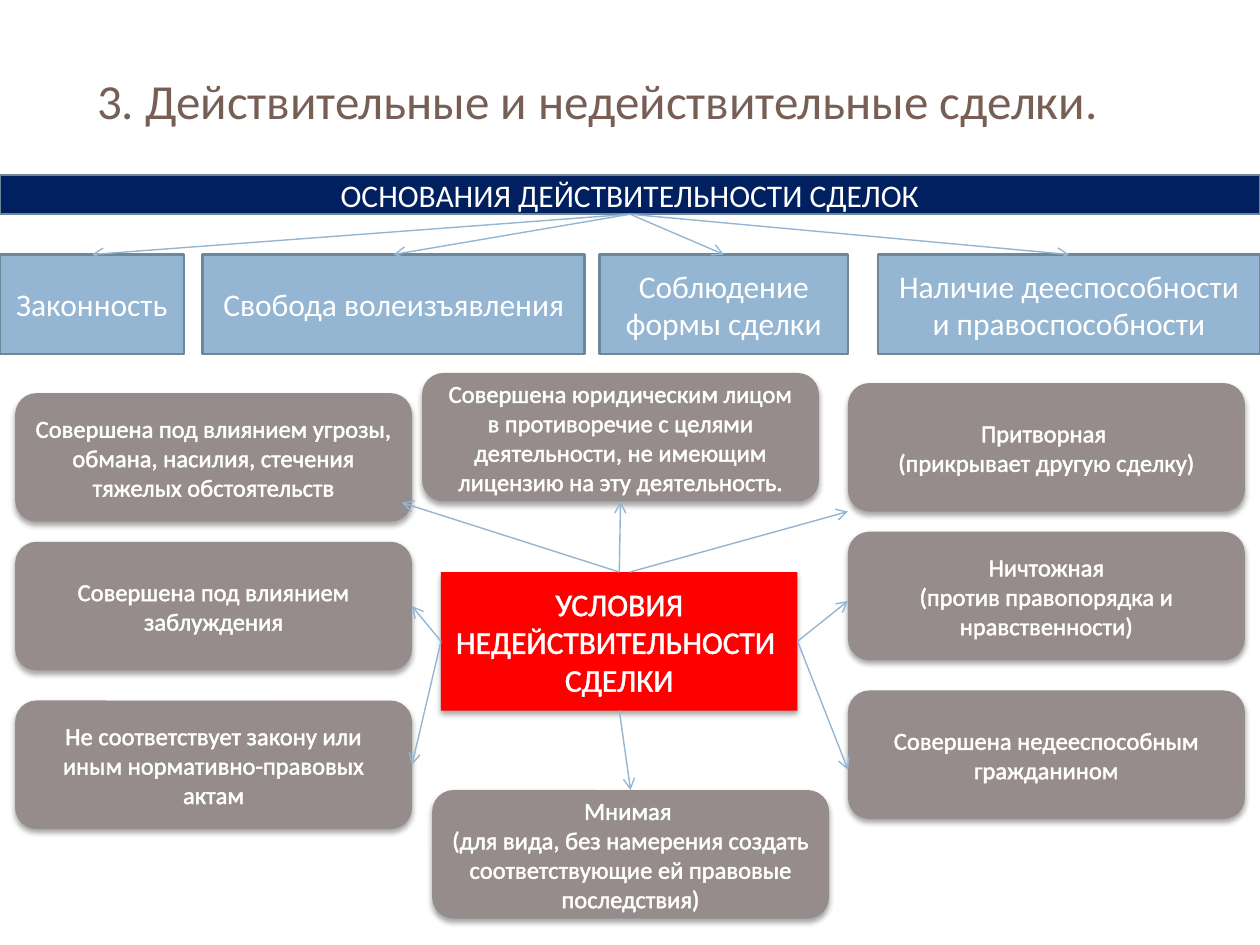
from lxml import etree
from pptx import Presentation
from pptx.dml.color import RGBColor
from pptx.enum.shapes import MSO_CONNECTOR, MSO_SHAPE
from pptx.enum.text import MSO_ANCHOR, PP_ALIGN
from pptx.oxml import parse_xml
from pptx.oxml.ns import qn
from pptx.util import Inches, Pt

RECT, ROUND = MSO_SHAPE.RECTANGLE, MSO_SHAPE.ROUNDED_RECTANGLE
LINE = MSO_CONNECTOR.STRAIGHT
LEFT, CENTER = PP_ALIGN.LEFT, PP_ALIGN.CENTER
MIDDLE = MSO_ANCHOR.MIDDLE
TOP, WEST, BOTTOM, EAST = range(4)
FONT = "Calibri"
WHITE, BROWN, NAVY = "FFFFFF", "775F55", "002060"
BLUE, EDGE, RED, GRAY = "94B6D2", "6D879B", "FF0000", "968C8C"
NS = 'xmlns:a="http://schemas.openxmlformats.org/drawingml/2006/main"'
SHADOW = (f'<a:effectLst {NS}><a:outerShdw blurRad="38100" dist="25400" '
          'dir="5400000" rotWithShape="0"><a:srgbClr val="000000">'
          '<a:alpha val="35000"/></a:srgbClr></a:outerShdw></a:effectLst>')
OUTLINE = (f'<a:ln {NS} w="18415"><a:solidFill><a:srgbClr val="FFFFFF"/>'
           '</a:solidFill></a:ln>')

GROUNDS = [
    (0, 1.46, "Законность"),
    (1.61, 3.03, "Свобода волеизъявления"),
    (4.76, 1.97, "Соблюдение формы сделки"),
    (6.97, 3.03, "Наличие дееспособности и правоспособности"),
]
ROWS = [0, 1.18, 2.44]
LEFTS = [
    "Совершена под влиянием угрозы, обмана, насилия, стечения тяжелых обстоятельств",
    "Совершена под влиянием заблуждения",
    "Не соответствует закону или иным нормативно-правовых актам",
]
RIGHTS = [
    "Притворная \n(прикрывает другую сделку)",
    "Ничтожная\n(против правопорядка и нравственности)",
    "Совершена недееспособным гражданином",
]
ABOVE = ("Совершена юридическим лицом в противоречие с целями деятельности, "
         "не имеющим лицензию на эту деятельность.")
BELOW = ("Мнимая \n(для вида, без намерения создать соответствующие ей "
         "правовые последствия)")


def color(code):
    """Turn a hex string into a colour."""
    return RGBColor.from_string(code)


def style(frame, size, code, align):
    """Format all paragraphs of a text frame."""
    frame.word_wrap = True
    frame.vertical_anchor = MIDDLE
    for para in frame.paragraphs:
        para.alignment = align
        para.font.name = FONT
        para.font.size = Pt(size)
        para.font.color.rgb = color(code)


def block(slide, box, text, fill, kind=RECT, size=18):
    """Add a filled shape with centred white text."""
    shape = slide.shapes.add_shape(kind, *map(Inches, box))
    shape.shadow.inherit = False
    shape.fill.solid()
    shape.fill.fore_color.rgb = color(fill)
    shape.text_frame.text = text
    style(shape.text_frame, size, WHITE, CENTER)
    return shape


def framed(slide, box, text, fill):
    """Add a block with a thin edge."""
    shape = block(slide, box, text, fill)
    shape.line.color.rgb = color(EDGE)
    shape.line.width = Pt(1.5)
    return shape


def raised(slide, box, text, fill, kind=ROUND, size=14):
    """Add a block with a drop shadow and outlined letters."""
    shape = block(slide, box, text, fill, kind, size)
    shape.line.fill.background()
    props = shape._element.spPr
    props.remove(props.find(qn("a:effectLst")))
    props.append(parse_xml(SHADOW))
    for para in shape.text_frame.paragraphs:
        for run in para.runs:
            run._r.get_or_add_rPr().insert(0, parse_xml(OUTLINE))
    return shape


def arrow(slide, start, end):
    """Draw an arrow between (shape, side) joins or (x, y) points."""
    joins = [isinstance(spot[0], (int, float)) for spot in (start, end)]
    first = start if joins[0] else (0, 0)
    last = end if joins[1] else (0, 0)
    line = slide.shapes.add_connector(LINE, *map(Inches, (*first, *last)))
    if not joins[0]:
        line.begin_connect(*start)
    if not joins[1]:
        line.end_connect(*end)
    line.line.color.rgb = color(BLUE)
    line.line.width = Pt(0.79)
    props = line._element.spPr
    etree.SubElement(props.find(qn("a:ln")), qn("a:tailEnd"), type="arrow")
    etree.SubElement(props, qn("a:effectLst"))


def heading(slide, box, text):
    """Place and format the title."""
    title = slide.shapes.title
    title.left, title.top, title.width, title.height = map(Inches, box)
    title.text_frame.text = text
    style(title.text_frame, 28, BROWN, LEFT)


def valid(slide, box):
    """Build the banner and the four grounds below it."""
    left, top, width, height = box
    banner = framed(slide, (left, top, width, 0.31),
                    "ОСНОВАНИЯ ДЕЙСТВИТЕЛЬНОСТИ СДЕЛОК", NAVY)
    tall = 0.79
    for shift, wide, text in GROUNDS:
        ground = framed(slide, (left + shift, top + height - tall, wide, tall),
                        text, BLUE)
        arrow(slide, (banner, BOTTOM), (ground, TOP))


def void(slide, box):
    """Build the red hub and the cards around it."""
    left, top, width, height = box
    wide, tall = 3.15, 1.02
    hub = raised(slide, (left + 3.38, top + 1.58, 2.83, 1.1),
                 "УСЛОВИЯ НЕДЕЙСТВИТЕЛЬНОСТИ \vСДЕЛКИ", RED, RECT, 18)

    def card(x, y, text):
        """Add one card at an offset in the box."""
        return raised(slide, (left + x, top + y, wide, tall), text, GRAY)

    west = [card(0, 0.16 + row, text) for row, text in zip(ROWS, LEFTS)]
    for row, text in zip(ROWS, RIGHTS):
        card(width - wide, 0.08 + row, text)
    below = card(3.31, height - tall, BELOW)
    above = card(3.23, 0, ABOVE)

    edge = left + width - wide
    arrow(slide, (hub, TOP), (above, BOTTOM))
    arrow(slide, (hub, TOP), (left + 3.07, top + 1.03))
    for item in west[1:]:
        arrow(slide, (hub, WEST), (item, EAST))
    arrow(slide, (hub, BOTTOM), (below, TOP))
    for drop in (3.15, 1.81):
        arrow(slide, (hub, EAST), (edge, top + drop))
    arrow(slide, (left + 4.88, top + 1.58), (edge, top + 1.1))


def main():
    """Build and save the slide."""
    deck = Presentation()
    deck.slide_width, deck.slide_height = Inches(10), Inches(7.5)
    slide = deck.slides.add_slide(deck.slide_layouts[5])
    heading(slide, (0.67, 0.25, 8.92, 1.08),
            "3. Действительные и недействительные сделки.")
    valid(slide, (0, 1.39, 10, 1.42))
    void(slide, (0.12, 2.96, 9.76, 4.33))
    deck.save("out.pptx")


if __name__ == "__main__":
    main()
